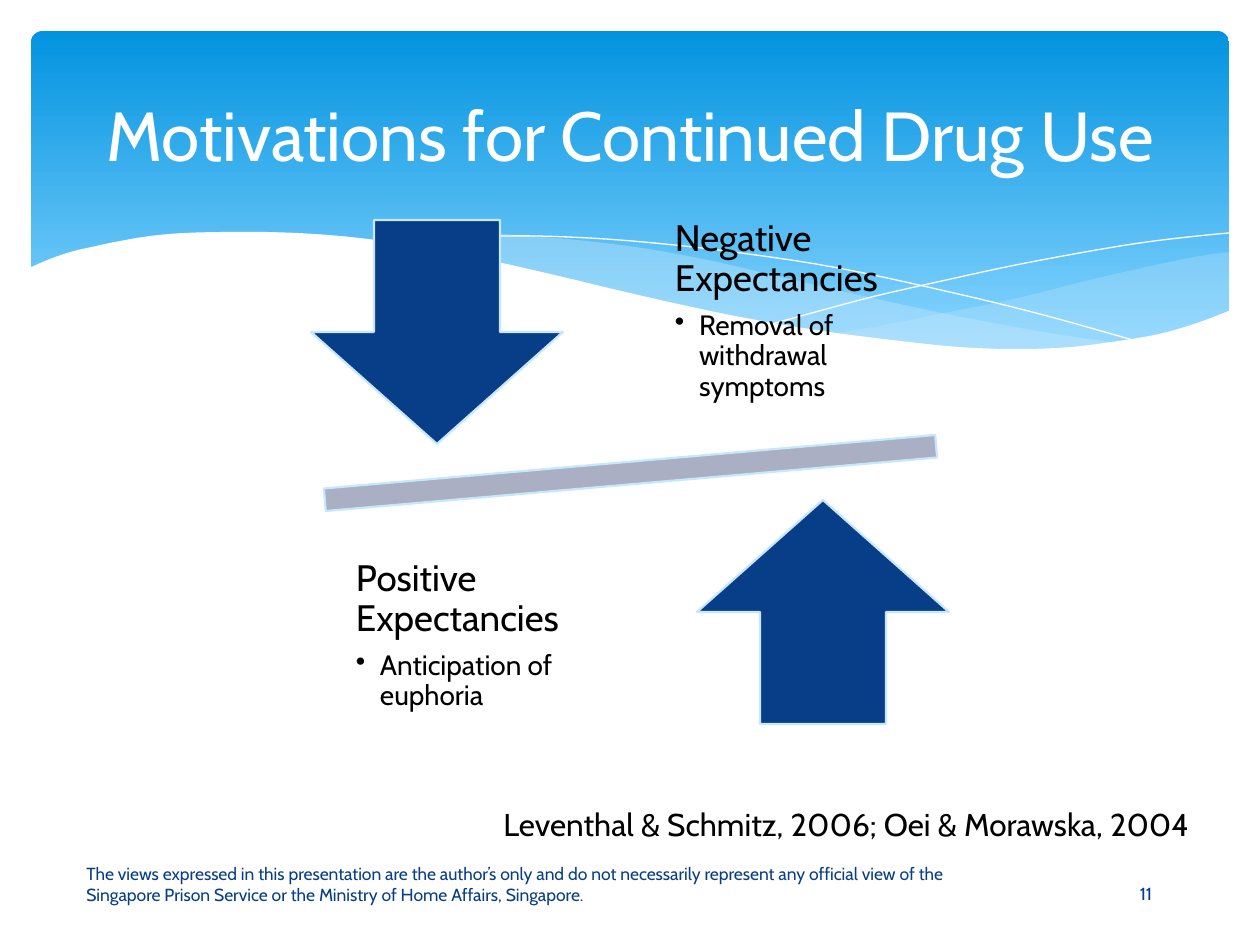
from lxml import etree
from pptx import Presentation
from pptx.dml.color import RGBColor
from pptx.enum.shapes import MSO_SHAPE
from pptx.enum.text import MSO_ANCHOR, MSO_AUTO_SIZE, PP_ALIGN
from pptx.oxml.ns import qn
from pptx.util import Pt

ROUNDED, MINUS = MSO_SHAPE.ROUNDED_RECTANGLE, MSO_SHAPE.MATH_MINUS
DOWN, UP = MSO_SHAPE.DOWN_ARROW, MSO_SHAPE.UP_ARROW
TOP, MIDDLE = MSO_ANCHOR.TOP, MSO_ANCHOR.MIDDLE
LEFT, CENTER = PP_ALIGN.LEFT, PP_ALIGN.CENTER
NO_FIT = MSO_AUTO_SIZE.NONE

EMU_PER_PX = 914400 / 126
SLIDE_SIZE = (1260, 945)
CURVE_STEPS = 5

THEME = {
    "font": "Cabin",
    "white": "FFFFFF", "black": "000000", "navy": "073E87",
    "pale": "C6E7FC", "grey": "ABAFC3",
    "sky_top": "0293E0", "sky_bottom": "83D3FE",
    "title": 39.6, "heading": 21, "citation": 18, "bullet": 16, "footer": 10,
    "outline": 1.25,
}

TITLE = "Motivations for Continued Drug Use"
TITLE_BOX = (63, 47, 1134, 173)
BANNER_BOX = (31, 31, 1198, 340)

BACK_WAVE = [
    [(1229, 252), (1194, 257), (1142, 268), (1085, 281), (1014, 299), (949, 312),
     (890, 324), (833, 334)],
    [(833, 334), (888, 341), (939, 347), (998, 349), (1052, 349), (1099, 345),
     (1140, 339), (1178, 330), (1213, 318), (1229, 311)],
]
MIDDLE_WAVE = [
    [(1125, 344), (1055, 334), (977, 320), (890, 302), (793, 280), (717, 262),
     (648, 249), (586, 241), (529, 236), (479, 233), (433, 234), (394, 237), (360, 241)],
    [(360, 241), (431, 251), (509, 266), (566, 280), (668, 302), (757, 321),
     (838, 335), (910, 345), (974, 349), (1031, 350), (1080, 349), (1125, 344)],
]
FALLING_LINE = [
    [(389, 246), (413, 242), (457, 238), (505, 236), (567, 237), (643, 242),
     (733, 252), (838, 268), (958, 294), (1047, 316), (1143, 343)],
]
RISING_LINE = [
    [(772, 324), (823, 310), (876, 296), (942, 281), (1016, 265), (1091, 251),
     (1147, 242), (1198, 236), (1229, 233)],
]
FRONT_WAVE = [
    [(1231, 310), (1197, 323), (1159, 334), (1118, 341), (1071, 347), (1019, 349),
     (959, 347), (892, 340), (816, 330), (730, 315), (634, 294), (563, 277),
     (493, 261), (428, 248), (368, 239), (315, 234), (266, 232), (223, 232),
     (184, 233), (150, 236), (120, 241), (96, 246), (74, 251), (58, 256),
     (45, 261), (29, 268)],
    [(29, 415), (1231, 415)],
]
WAVES = [
    (BACK_WAVE, "pale", 29, None),
    (MIDDLE_WAVE, "pale", 40, None),
    (FALLING_LINE, None, None, "white"),
    (RISING_LINE, None, None, "white"),
    (FRONT_WAVE, "white", None, None),
]

BALANCE = [
    (MINUS, (213, 425, 835, 96), "grey", 355),
    (DOWN, (311, 220, 252, 224), "navy", 0),
    (UP, (697, 500, 252, 224), "navy", 0),
]
EXPECTANCIES = [
    ((655, 193, 268, 236), "Negative Expectancies", "Removal of withdrawal symptoms"),
    ((336, 518, 268, 236), "Positive Expectancies", "Anticipation of euphoria"),
]
LABELS = [
    ((491, 799, 740, 50), "Leventhal & Schmitz, 2006; Oei & Morawska, 2004",
     "citation", "black", TOP, LEFT),
    ((74, 859, 953, 50),
     "The views expressed in this presentation are the author’s only and do not "
     "necessarily represent any official view of the Singapore Prison Service or "
     "the Ministry of Home Affairs, Singapore.",
     "footer", "navy", MIDDLE, LEFT),
    ((1066, 869, 160, 50), "11", "footer", "navy", MIDDLE, CENTER),
]


def px(length):
    return round(length * EMU_PER_PX)


def emu(lengths):
    return [px(length) for length in lengths]


def color(name):
    return RGBColor.from_string(THEME[name])


def apply(target, values):
    for name, value in values.items():
        setattr(target, name, value)


def smooth_curve(points):
    padded = [points[0], *points, points[-1]]
    curve = [points[0]]
    for a, b, c, d in zip(padded, padded[1:], padded[2:], padded[3:]):
        for step in range(1, CURVE_STEPS + 1):
            t = step / CURVE_STEPS
            curve.append(tuple(
                (2 * q + (r - p) * t + (2 * p - 5 * q + 4 * r - s) * t ** 2
                 + (3 * q - p - 3 * r + s) * t ** 3) / 2
                for p, q, r, s in zip(a, b, c, d)))
    return curve


def paint(shape, fill=None, line=None, width=0):
    shape.shadow.inherit = False
    for part, name in ((shape.fill, fill), (shape.line.fill, line)):
        if name:
            part.solid()
            part.fore_color.rgb = color(name)
        else:
            part.background()
    if line:
        shape.line.width = Pt(width)


def add_banner(shapes):
    banner = shapes.add_shape(ROUNDED, *emu(BANNER_BOX))
    banner.adjustments[0] = 0.034
    paint(banner)
    banner.fill.gradient()
    banner.fill.gradient_angle = 270
    stops = zip(banner.fill.gradient_stops, (0, 0.9), ("sky_top", "sky_bottom"))
    for stop, position, name in stops:
        stop.position = position
        stop.color.rgb = color(name)


def add_wave(shapes, curves, fill, opacity, line):
    points = [emu(point) for curve in curves for point in smooth_curve(curve)]
    builder = shapes.build_freeform(*points[0])
    builder.add_line_segments(points[1:], close=fill is not None)
    wave = builder.convert_to_shape()
    paint(wave, fill, line)
    if opacity:
        tint = wave.element.spPr.find(qn("a:solidFill")).find(qn("a:srgbClr"))
        etree.SubElement(tint, qn("a:alpha"), val=str(opacity * 1000))


def write(paragraph, text, size, color_name, **values):
    run = paragraph.add_run()
    run.text = text
    apply(run.font, {"name": THEME["font"], "size": Pt(THEME[size])})
    run.font.color.rgb = color(color_name)
    apply(paragraph, values)


def add_text_frame(shapes, box, anchor):
    frame = shapes.add_textbox(*emu(box)).text_frame
    apply(frame, {"word_wrap": True, "auto_size": NO_FIT, "vertical_anchor": anchor})
    return frame


def add_expectancy(shapes, box, heading, detail):
    frame = add_text_frame(shapes, box, MIDDLE)
    sides = ("left", "top", "right", "bottom")
    apply(frame, {f"margin_{side}": px(20) for side in sides})
    write(frame.paragraphs[0], heading, "heading", "black",
          line_spacing=0.9, space_after=Pt(7))
    bullet = frame.add_paragraph()
    write(bullet, detail, "bullet", "black",
          level=1, line_spacing=0.9, space_after=Pt(2))
    properties = bullet._p.get_or_add_pPr()
    properties.set("marL", str(px(24)))
    properties.set("indent", str(px(-24)))
    etree.SubElement(properties, qn("a:buChar"), char="•")


def main():
    presentation = Presentation()
    presentation.slide_width, presentation.slide_height = emu(SLIDE_SIZE)
    slide = presentation.slides.add_slide(presentation.slide_layouts[5])
    shapes = slide.shapes

    add_banner(shapes)
    for wave in WAVES:
        add_wave(shapes, *wave)

    title = shapes.title
    title.element.getparent().append(title.element)
    apply(title, dict(zip(("left", "top", "width", "height"), emu(TITLE_BOX))))
    apply(title.text_frame,
          {"word_wrap": True, "auto_size": NO_FIT, "vertical_anchor": MIDDLE})
    write(title.text_frame.paragraphs[0], TITLE, "title", "white", alignment=CENTER)

    for kind, box, fill, rotation in BALANCE:
        shape = shapes.add_shape(kind, *emu(box))
        shape.rotation = rotation
        paint(shape, fill, "pale", THEME["outline"])
    for expectancy in EXPECTANCIES:
        add_expectancy(shapes, *expectancy)
    for box, text, size, color_name, anchor, alignment in LABELS:
        frame = add_text_frame(shapes, box, anchor)
        write(frame.paragraphs[0], text, size, color_name, alignment=alignment)

    presentation.save("out.pptx")


if __name__ == "__main__":
    main()
